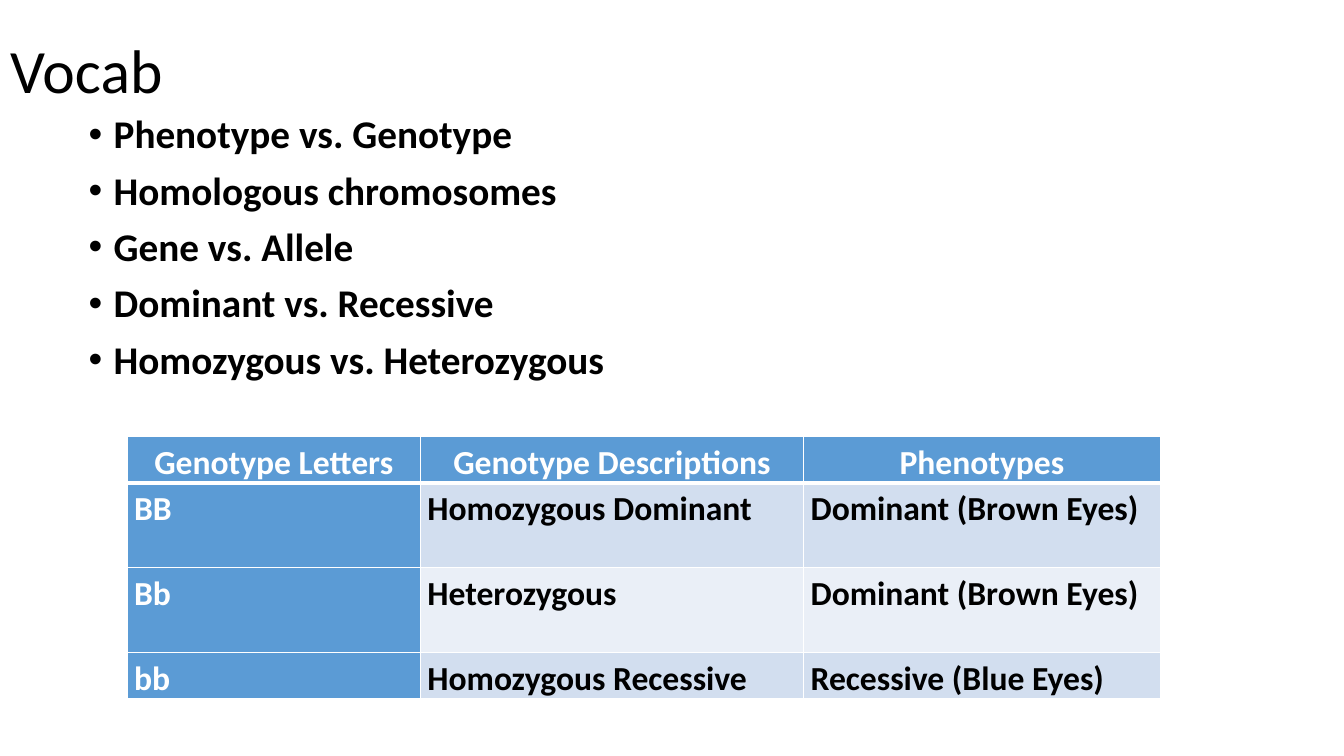
from lxml import etree
from pptx import Presentation
from pptx import util as u
from pptx.dml.color import RGBColor
from pptx.enum import text
from pptx.oxml import ns

COLORS = {"black": "000000", "white": "FFFFFF", "header": "5B9BD5",
          "band_dark": "D2DEEF", "band_light": "EAEFF7"}


def set_font(p, size, color, bold=False):
    p.font.name = "Calibri"
    p.font.size = u.Pt(size)
    p.font.bold = bold
    p.font.color.rgb = RGBColor.from_string(COLORS[color])


def set_borders(cell, bottom):
    tc_pr = cell._tc.get_or_add_tcPr()
    widths = {"lnL": 1, "lnR": 1, "lnT": 1, "lnB": bottom}
    for i, (side, width) in enumerate(widths.items()):
        ln = etree.Element(ns.qn(f"a:{side}"), w=str(u.Pt(width)))
        fill = etree.SubElement(ln, ns.qn("a:solidFill"))
        etree.SubElement(fill, ns.qn("a:srgbClr"), val=COLORS["white"])
        tc_pr.insert(i, ln)


prs = Presentation()
prs.slide_width, prs.slide_height = u.Inches(13.33), u.Inches(7.5)
s = prs.slides.add_slide(prs.slide_layouts[5])

# Title
title = s.shapes.title
title.left, title.top = u.Inches(0), u.Inches(0)
title.width, title.height = u.Inches(11.5), u.Inches(1.45)
tf = title.text_frame
tf.text = "Vocab"
tf.auto_size = text.MSO_AUTO_SIZE.NONE
tf.vertical_anchor = text.MSO_ANCHOR.MIDDLE
p = tf.paragraphs[0]
p.alignment = text.PP_ALIGN.LEFT
p.line_spacing = 0.9
set_font(p, 44, "black")

# Bulleted terms
terms = ["Phenotype vs. Genotype", "Homologous chromosomes", "Gene vs. Allele",
         "Dominant vs. Recessive", "Homozygous vs. Heterozygous"]
sp = s.shapes.add_textbox(u.Inches(0.78), u.Inches(1.09), u.Inches(11.5), u.Inches(4.76))
tf = sp.text_frame
tf.word_wrap = True
tf.text = "\n".join(terms)
for p in tf.paragraphs:
    p.line_spacing = 0.9
    p.space_before = u.Pt(10)
    set_font(p, 28, "black", bold=True)
    p_pr = p._p.get_or_add_pPr()
    p_pr.set("marL", str(u.Inches(0.25)))
    p_pr.set("indent", str(u.Inches(-0.25)))
    etree.SubElement(p_pr, ns.qn("a:buFont"), typeface="Arial")
    etree.SubElement(p_pr, ns.qn("a:buChar"), char="•")
    p_pr.append(p_pr.find(ns.qn("a:defRPr")))

# Genotype table
rows = [
    ["Genotype Letters", "Genotype Descriptions", "Phenotypes"],
    ["BB", "Homozygous Dominant", "Dominant (Brown Eyes)"],
    ["Bb", "Heterozygous", "Dominant (Brown Eyes)"],
    ["bb", "Homozygous Recessive", "Recessive (Blue Eyes)"],
]
table = s.shapes.add_table(4, 3, u.Inches(1.26), u.Inches(4.33),
                           u.Inches(10.25), u.Inches(2.52)).table
for col, width in zip(table.columns, [2.91, 3.8, 3.54]):
    col.width = u.Inches(width)
for row, height in zip(table.rows, [0.42, 0.84, 0.84, 0.42]):
    row.height = u.Inches(height)

for i, row in enumerate(rows):
    for j, value in enumerate(row):
        cell = table.cell(i, j)
        is_header = i == 0 or j == 0
        band = "band_dark" if i % 2 else "band_light"
        cell.fill.solid()
        cell.fill.fore_color.rgb = RGBColor.from_string(COLORS["header" if is_header else band])
        cell.margin_left = cell.margin_right = u.Inches(0.07)
        cell.margin_top = cell.margin_bottom = 0
        cell.text = value
        p = cell.text_frame.paragraphs[0]
        p.alignment = text.PP_ALIGN.CENTER if i == 0 else text.PP_ALIGN.LEFT
        p.line_spacing = 1.15
        set_font(p, 24, "white" if is_header else "black", bold=True)
        set_borders(cell, bottom=3 if i == 0 else 1)

prs.save("out.pptx")
